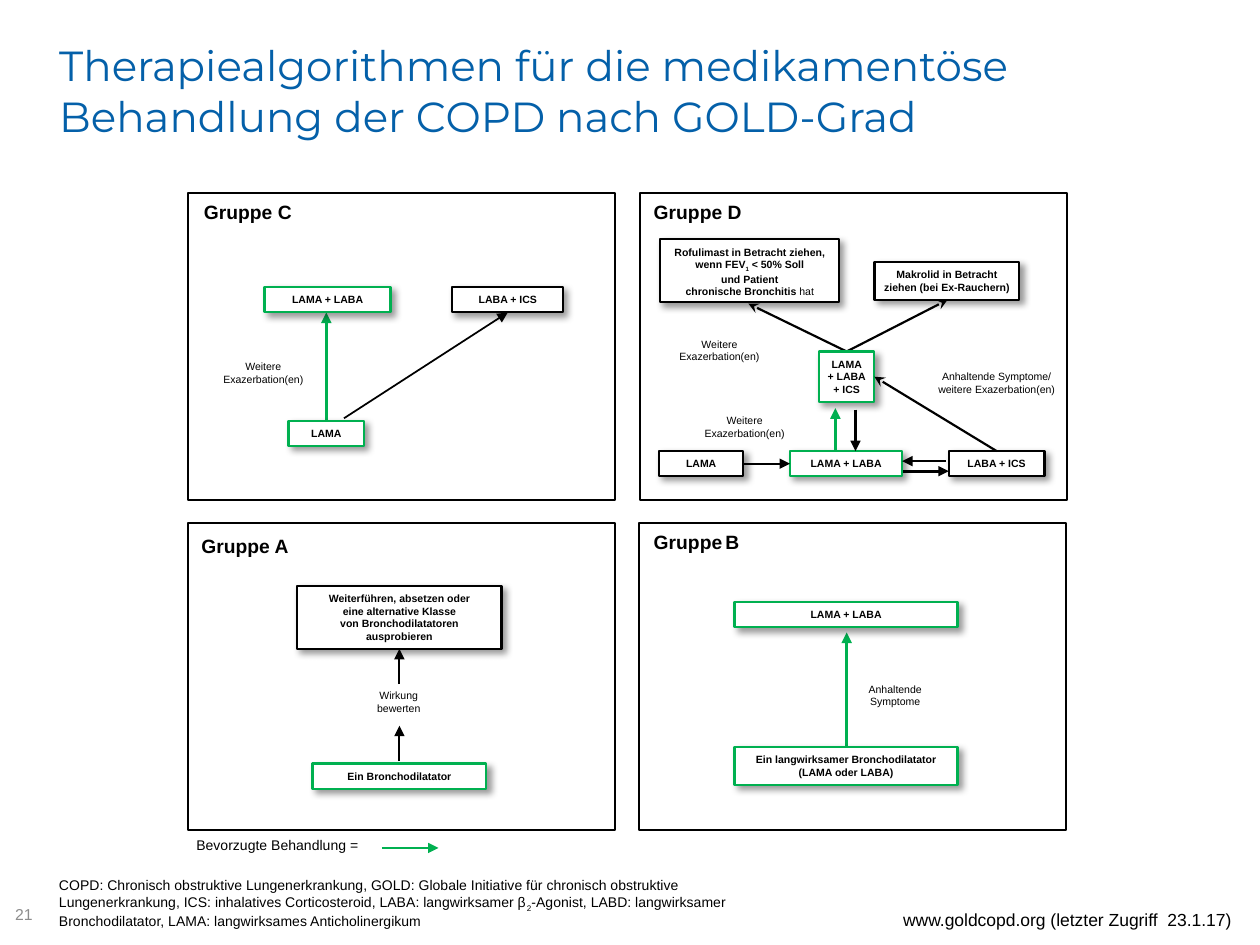
from dataclasses import dataclass

import pptx
import pptx.dml.color
import pptx.enum.shapes
import pptx.enum.text
import pptx.oxml
import pptx.oxml.ns
import pptx.util
from pptx.util import Inches

ALIGN = pptx.enum.text.PP_ALIGN
ANCHOR = pptx.enum.text.MSO_ANCHOR
DRAWING = pptx.oxml.ns.nsdecls("a")
SHADOW = (
    f'<a:effectLst {DRAWING}><a:outerShdw blurRad="50800" dist="38100" dir="2700000" '
    'algn="tl" rotWithShape="0"><a:srgbClr val="000000"><a:alpha val="40000"/>'
    "</a:srgbClr></a:outerShdw></a:effectLst>"
)


@dataclass(frozen=True)
class Theme:
    black: str = "000000"
    white: str = "FFFFFF"
    green: str = "00B050"
    blue: str = "0460A9"
    grey: str = "8C8C8C"
    body_font: str = "Arial"
    title_font: str = "Montserrat"
    title: float = 24
    heading: float = 11
    source: float = 10
    number: float = 9
    note: float = 8
    label: float = 6
    outline: float = 1.25


THEME = Theme()
PANEL_SIZE = (3.39, 2.44)
MORE = "Weitere Exazerbation(en)"


def rgb(value):
    return pptx.dml.color.RGBColor.from_string(value)


def write(shape, content, size, color=THEME.black, font=THEME.body_font, bold=False,
          align=ALIGN.LEFT, anchor=ANCHOR.TOP, insets=(0.1, 0.05, 0.1, 0.05)):
    """Fill a shape with text; content is a string or a list of (text, options) spans."""
    frame = shape.text_frame
    frame.word_wrap = True
    frame.vertical_anchor = anchor
    frame.margin_left, frame.margin_top, frame.margin_right, frame.margin_bottom = map(Inches, insets)
    para = frame.paragraphs[0]
    para.alignment = align
    para.font.size = pptx.util.Pt(size)
    para.font.name = font
    para.font.bold = bold
    para.font.color.rgb = rgb(color)
    spans = [(content, {})] if isinstance(content, str) else content
    for text, options in spans:
        for index, line in enumerate(text.split("\n")):
            if index:
                para.add_line_break()
            span = para.add_run()
            span.text = line
            if "size" in options:
                span.font.size = pptx.util.Pt(options["size"])
            if "bold" in options:
                span.font.bold = options["bold"]
            if options.get("subscript"):
                span.font._element.set("baseline", "-25000")
    return para


def add_text(page, area, content, size, **style):
    box = page.shapes.add_textbox(*map(Inches, area))
    return write(box, content, size, **style)


def add_label(page, area, content):
    add_text(page, area, content, THEME.label, align=ALIGN.CENTER)


def add_rectangle(page, area, color):
    box = page.shapes.add_shape(pptx.enum.shapes.MSO_SHAPE.RECTANGLE, *map(Inches, area))
    box.shadow.inherit = False
    box.line.color.rgb = rgb(color)
    box.line.width = pptx.util.Pt(THEME.outline)
    return box


def add_panel(page, corner, heading, heading_corner):
    add_rectangle(page, (*corner, *PANEL_SIZE), THEME.black).fill.background()
    add_text(page, (*heading_corner, 0.96, 0.29), heading, THEME.heading, bold=True)


def add_therapy(page, area, content, color=THEME.black, side=0.1):
    """Add a white therapy box with a soft shadow; side is its left and right inset."""
    box = add_rectangle(page, area, color)
    box.fill.solid()
    box.fill.fore_color.rgb = rgb(THEME.white)
    properties = box._element.spPr
    properties.remove(properties.find(pptx.oxml.ns.qn("a:effectLst")))
    properties.append(pptx.oxml.parse_xml(SHADOW))
    write(box, content, THEME.label, bold=True, align=ALIGN.CENTER,
          insets=(side, 0.05, side, 0.05))


def add_arrow(page, start, end, color=THEME.black, width=THEME.outline, head="triangle"):
    arrow = page.shapes.add_connector(
        pptx.enum.shapes.MSO_CONNECTOR.STRAIGHT, *map(Inches, (*start, *end)))
    arrow.line.color.rgb = rgb(color)
    arrow.line.width = pptx.util.Pt(width)
    arrow.line._get_or_add_ln().append(
        pptx.oxml.parse_xml(f'<a:tailEnd {DRAWING} type="{head}"/>'))
    arrow._element.spPr.append(pptx.oxml.parse_xml(f"<a:effectLst {DRAWING}/>"))


def add_group_c(page):
    add_panel(page, (1.49, 1.53), "Gruppe C", (1.52, 1.54))
    add_arrow(page, (2.59, 3.34), (2.59, 2.48), THEME.green, 2)
    add_arrow(page, (2.73, 3.32), (4.03, 2.48), width=1)
    add_label(page, (1.62, 2.81, 0.94, 0.3), MORE)
    add_therapy(page, (2.1, 2.28, 1, 0.2), "LAMA + LABA", THEME.green)
    add_therapy(page, (3.59, 2.28, 0.88, 0.2), "LABA + ICS")
    add_therapy(page, (2.29, 3.34, 0.6, 0.2), "LAMA", THEME.green)


def add_group_d(page):
    add_panel(page, (5.08, 1.53), "Gruppe D", (5.09, 1.54))
    add_therapy(page, (5.24, 1.9, 1.42, 0.5), [
        ("Rofulimast in Betracht ziehen,\nwenn FEV", {}),
        ("1", {"subscript": True}),
        (" < 50% Soll\nund Patient\nchronische Bronchitis", {}),
        (" hat", {"bold": False}),
    ], side=0.08)
    add_therapy(page, (6.94, 2.08, 1.15, 0.3),
                "Makrolid in Betracht ziehen (bei Ex-Rauchern)", side=0.04)
    add_therapy(page, (5.23, 3.58, 0.67, 0.2), "LAMA")
    add_therapy(page, (6.27, 3.58, 0.89, 0.2), "LAMA + LABA", THEME.green)
    add_therapy(page, (7.53, 3.58, 0.76, 0.2), "LABA + ICS")
    add_label(page, (5.24, 2.63, 0.94, 0.3), MORE)
    add_label(page, (5.39, 3.24, 1.04, 0.3), MORE)
    add_label(page, (7.28, 2.89, 1.26, 0.3), "Anhaltende Symptome/\nweitere Exazerbation(en)")
    add_arrow(page, (5.9, 3.68), (6.27, 3.68))
    for end in ((7.52, 2.38), (5.94, 2.41)):
        add_arrow(page, (6.72, 2.79), end, head="stealth")
    add_arrow(page, (7.51, 3.66), (7.16, 3.66), width=1.5)
    add_arrow(page, (7.17, 3.74), (7.53, 3.74), width=1.5)
    add_arrow(page, (6.63, 3.57), (6.63, 3.24), THEME.green, 2)
    add_arrow(page, (6.79, 3.25), (6.79, 3.58), width=1.5)
    add_therapy(page, (6.5, 2.79, 0.44, 0.4), "LAMA\n+ LABA\n+ ICS", THEME.green, side=0.04)
    add_arrow(page, (7.91, 3.58), (6.94, 2.99), head="stealth")


def add_group_a(page):
    add_panel(page, (1.49, 4.15), "Gruppe A", (1.5, 4.19))
    add_therapy(page, (2.36, 4.65, 1.62, 0.5),
                "Weiterführen, absetzen oder\neine alternative Klasse\n"
                "von Bronchodilatatoren ausprobieren")
    add_therapy(page, (2.48, 6.06, 1.38, 0.2), "Ein Bronchodilatator", THEME.green)
    add_label(page, (2.75, 5.42, 0.83, 0.3), "Wirkung bewerten")
    for bottom in (5.43, 6.04):
        add_arrow(page, (3.17, bottom), (3.17, bottom - 0.28))


def add_group_b(page):
    heading = [("Gruppe", {}), (" ", {"size": THEME.label}), ("B", {})]
    add_panel(page, (5.07, 4.15), heading, (5.09, 4.16))
    add_arrow(page, (6.72, 5.93), (6.72, 5.02), THEME.green, 2)
    add_therapy(page, (5.83, 4.78, 1.77, 0.2), "LAMA + LABA", THEME.green)
    add_therapy(page, (5.83, 5.93, 1.77, 0.3),
                "Ein langwirksamer Bronchodilatator\n(LAMA oder LABA)", THEME.green)
    add_label(page, (6.69, 5.37, 0.83, 0.3), "Anhaltende Symptome")


def add_footer(page):
    add_text(page, (1.46, 6.59, 2.13, 0.37), "Bevorzugte Behandlung =", THEME.note)
    add_arrow(page, (3.03, 6.73), (3.48, 6.73), THEME.green, 1.5)
    add_text(page, (0.37, 6.91, 5.93, 0.5), [
        ("COPD: Chronisch obstruktive Lungenerkrankung, GOLD: Globale Initiative für "
         "chronisch obstruktive Lungenerkrankung, ICS: inhalatives Corticosteroid, "
         "LABA: langwirksamer β", {}),
        ("2", {"subscript": True}),
        ("-Agonist, LABD: langwirksamer Bronchodilatator, "
         "LAMA: langwirksames Anticholinergikum", {}),
    ], THEME.note)
    add_text(page, (0, 7.06, 0.31, 0.4), "21", THEME.number, color=THEME.grey,
             anchor=ANCHOR.MIDDLE, insets=(0.12, 0.05, 0, 0.05))
    source = add_text(page, (6.94, 7.15, 2.93, 0.29),
                      "www.goldcopd.org (letzter Zugriff  23.1.17)",
                      THEME.source, align=ALIGN.RIGHT)
    source.line_spacing = 1.1


def main():
    deck = pptx.Presentation()
    deck.slide_width, deck.slide_height = Inches(10), Inches(7.5)
    page = deck.slides.add_slide(deck.slide_layouts[6])
    add_text(page, (0.47, 0.19, 8.98, 1.05),
             "Therapiealgorithmen für die medikamentöse Behandlung der COPD nach GOLD-Grad",
             THEME.title, color=THEME.blue, font=THEME.title_font,
             anchor=ANCHOR.MIDDLE, insets=(0, 0, 0, 0))
    for add_group in (add_group_c, add_group_d, add_group_a, add_group_b):
        add_group(page)
    add_footer(page)
    deck.save("out.pptx")


if __name__ == "__main__":
    main()
